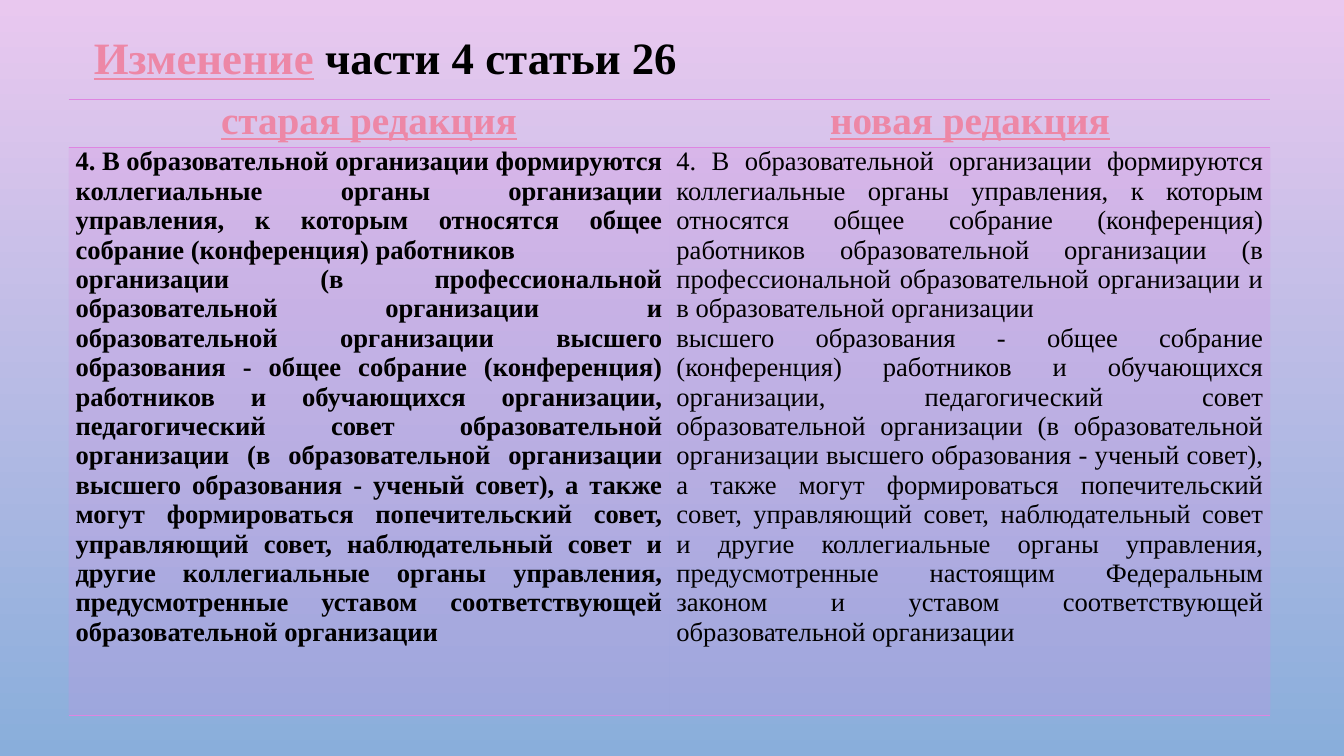
import pptx
import pptx.util
import pptx.dml.color
import pptx.enum.text
import pptx.oxml
import pptx.oxml.ns
from lxml import etree

TITLE = [("Изменение", "accent"), (" части 4 статьи 26", "text")]
HEADERS = ["старая редакция", "новая редакция"]
OLD_TEXT = [
    "4. В образовательной организации формируются коллегиальные органы организации управления, "
    "к которым относятся общее собрание (конференция) работников",
    "организации (в профессиональной образовательной организации и образовательной организации "
    "высшего образования - общее собрание (конференция) работников и обучающихся организации, "
    "педагогический совет образовательной организации (в образовательной организации высшего "
    "образования - ученый совет), а также могут формироваться попечительский совет, управляющий "
    "совет, наблюдательный совет и другие коллегиальные органы управления, предусмотренные "
    "уставом соответствующей образовательной организации",
]
NEW_TEXT = [
    "4. В образовательной организации формируются коллегиальные органы управления, к которым "
    "относятся общее собрание (конференция) работников образовательной организации "
    "(в профессиональной образовательной организации и в образовательной организации",
    "высшего образования - общее собрание (конференция) работников и обучающихся организации, "
    "педагогический совет образовательной организации (в образовательной организации высшего "
    "образования - ученый совет), а также могут формироваться попечительский совет, управляющий "
    "совет, наблюдательный совет и другие коллегиальные органы управления, предусмотренные "
    "настоящим Федеральным законом и уставом соответствующей образовательной организации",
]
COLORS = {"accent": "ED87A6", "text": "000000", "table": "DE85E1",
          "sky_top": "E9C8EF", "sky_bottom": "89AEDB"}
FONT = "Times New Roman"
WIDTH, HEIGHT = 13.33, 7.5
TABLE_LEFT, TABLE_TOP, COLUMN_WIDTH = 0.68, 0.99, 5.96
ROW_HEIGHTS = [0.47, 5.64]
NO_STYLE = "{2D5ABB26-0587-4C30-8999-92F81FD0307C}"
ALIGN = pptx.enum.text.PP_ALIGN
Inches = pptx.util.Inches


def rgb(name):
    return pptx.dml.color.RGBColor.from_string(COLORS[name])


def add_span(para, text, size, color, bold=True):
    """Add one run; accent-coloured runs are underlined."""
    span = para.add_run()
    span.text = text
    font = span.font
    font.name, font.size, font.bold = FONT, pptx.util.Pt(size), bold
    font.underline = color == "accent"
    font.color.rgb = rgb(color)


def add_border(cell, side):
    cell._tc.get_or_add_tcPr().append(pptx.oxml.parse_xml(
        f'<a:{side} {pptx.oxml.ns.nsdecls("a")} w="12700"><a:solidFill>'
        f'<a:srgbClr val="{COLORS["table"]}"/></a:solidFill></a:{side}>'))


def fill_cell(cell, texts, align, size, color, bold):
    cell.margin_left = cell.margin_right = Inches(0.07)
    cell.margin_top = cell.margin_bottom = 0
    frame = cell.text_frame
    for index, text in enumerate(texts):
        para = frame.add_paragraph() if index else frame.paragraphs[0]
        para.alignment = align
        add_span(para, text, size, color, bold)


def tint_cell(cell):
    """Fill a cell with the table colour at 20 % opacity."""
    cell.fill.solid()
    cell.fill.fore_color.rgb = rgb("table")
    color = cell._tc.tcPr.find(".//" + pptx.oxml.ns.qn("a:solidFill") + "[last()]")
    color = cell._tc.tcPr.find(pptx.oxml.ns.qn("a:solidFill"))[0]
    etree.SubElement(color, pptx.oxml.ns.qn("a:alpha")).set("val", "20000")


def add_title(page):
    box = page.shapes.title
    box.left, box.top, box.width, box.height = map(Inches, (0.83, 0.24, 6.04, 0.64))
    frame = box.text_frame
    frame.word_wrap = False
    frame.auto_size = pptx.enum.text.MSO_AUTO_SIZE.SHAPE_TO_FIT_TEXT
    frame.vertical_anchor = pptx.enum.text.MSO_ANCHOR.TOP
    para = frame.paragraphs[0]
    para.alignment = ALIGN.JUSTIFY
    for text, color in TITLE:
        add_span(para, text, 32, color)


def add_comparison(page):
    frame = page.shapes.add_table(
        2, 2, Inches(TABLE_LEFT), Inches(TABLE_TOP),
        Inches(2 * COLUMN_WIDTH), Inches(sum(ROW_HEIGHTS)))
    table = frame.table
    table.first_row = table.horz_banding = False
    table._tbl.tblPr.find(pptx.oxml.ns.qn("a:tableStyleId")).text = NO_STYLE
    for row, height in zip(table.rows, ROW_HEIGHTS):
        row.height = Inches(height)
    for index, (header, body) in enumerate(zip(HEADERS, (OLD_TEXT, NEW_TEXT))):
        table.columns[index].width = Inches(COLUMN_WIDTH)
        top, bottom = table.cell(0, index), table.cell(1, index)
        fill_cell(top, [header], ALIGN.CENTER, 28, "accent", True)
        fill_cell(bottom, body, ALIGN.JUSTIFY, 19, "text", index == 0)
        for cell, side in ((top, "lnT"), (top, "lnB"), (bottom, "lnT"), (bottom, "lnB")):
            add_border(cell, side)
        top.fill.background()
        tint_cell(bottom)


def main():
    deck = pptx.Presentation()
    deck.slide_width, deck.slide_height = Inches(WIDTH), Inches(HEIGHT)
    page = deck.slides.add_slide(deck.slide_layouts[5])
    sky = page.background.fill
    sky.gradient()
    sky.gradient_angle = 270
    for stop, name in zip(sky.gradient_stops, ("sky_top", "sky_bottom")):
        stop.color.rgb = rgb(name)
    add_title(page)
    add_comparison(page)
    deck.save("out.pptx")


if __name__ == "__main__":
    main()
